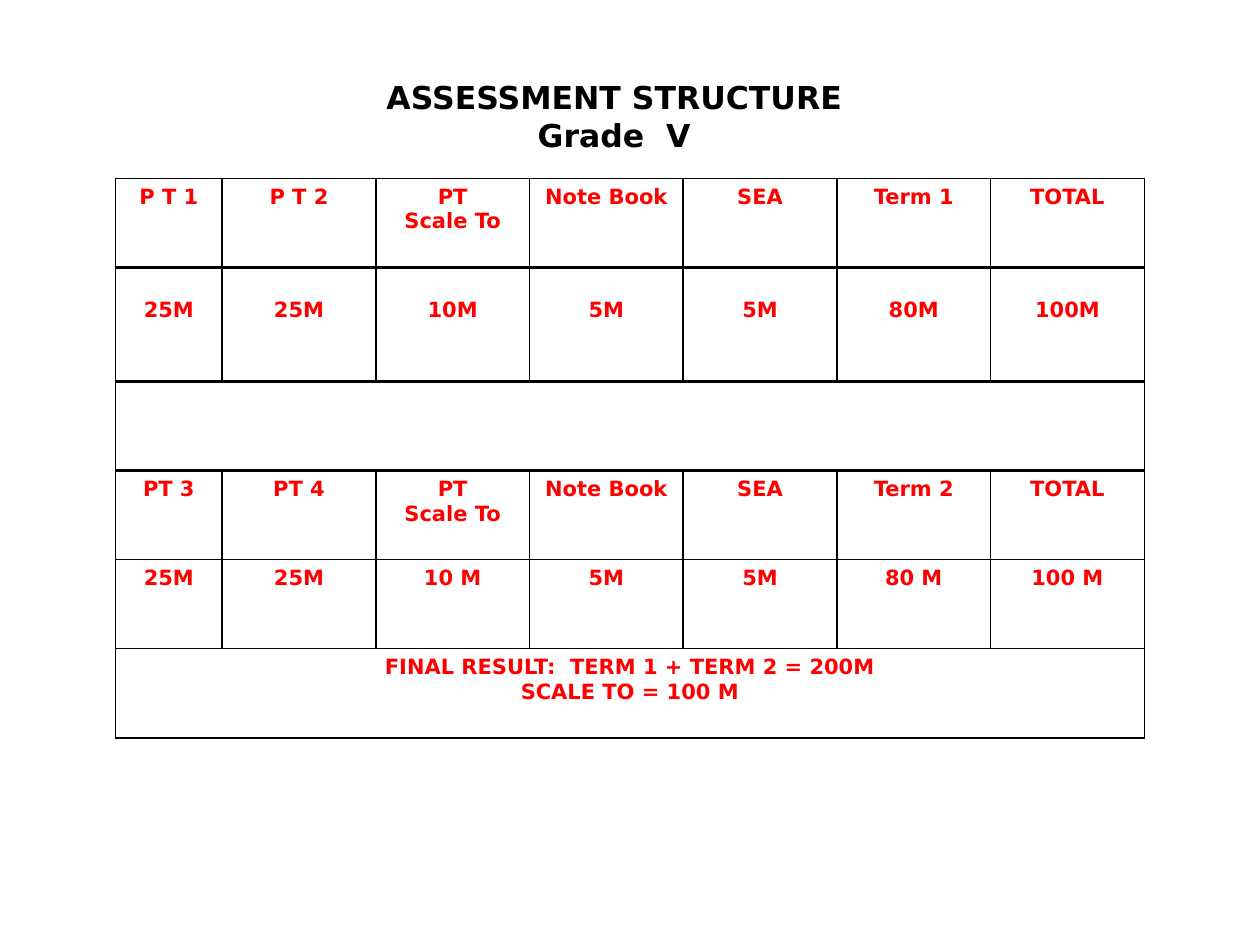
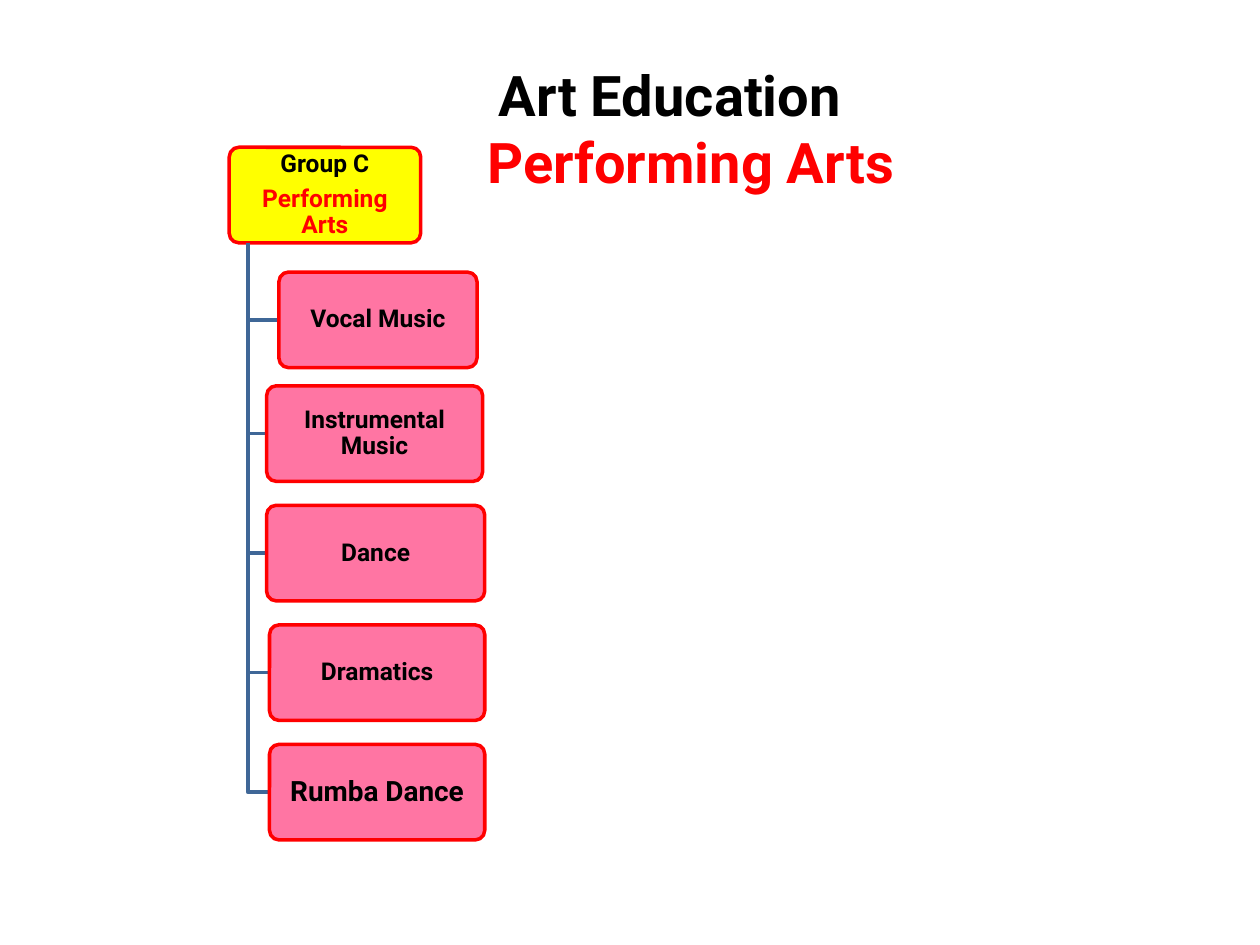
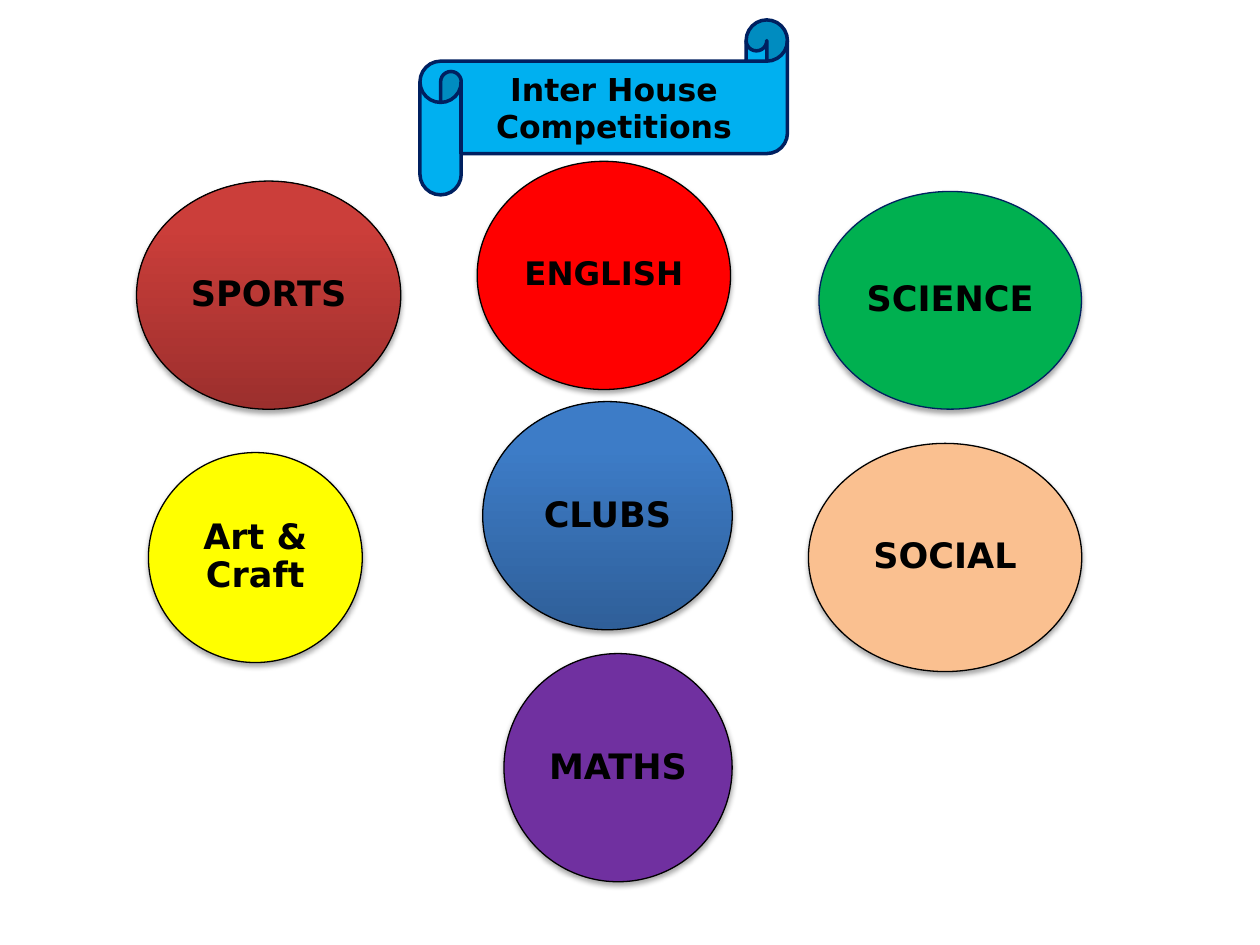
from dataclasses import dataclass

from lxml import etree
from pptx import Presentation
from pptx.dml.color import RGBColor
from pptx.enum.shapes import MSO_SHAPE
from pptx.enum.text import MSO_ANCHOR, PP_ALIGN
from pptx.oxml.ns import qn
from pptx.util import Pt

BLACK = RGBColor(0x00, 0x00, 0x00)
WHITE = RGBColor(0xFF, 0xFF, 0xFF)
RED = RGBColor(0xFF, 0x00, 0x00)
YELLOW = RGBColor(0xFF, 0xFF, 0x00)
PINK = RGBColor(0xFF, 0x66, 0x99)
STEEL = RGBColor(0x3F, 0x67, 0x97)
NAVY = RGBColor(0x00, 0x20, 0x60)
SKY = RGBColor(0x00, 0xB0, 0xF0)
GREEN = RGBColor(0x00, 0xB0, 0x50)
PEACH = RGBColor(0xFA, 0xC0, 0x90)
PURPLE = RGBColor(0x70, 0x30, 0xA0)
BLUE_FADE = (RGBColor(0x2F, 0x5F, 0x99), RGBColor(0x3D, 0x7C, 0xC7))
BRICK_FADE = (RGBColor(0x9C, 0x2F, 0x2D), RGBColor(0xCB, 0x3E, 0x3A))

ROUND_RECT = MSO_SHAPE.ROUNDED_RECTANGLE
ELLIPSE = MSO_SHAPE.OVAL
SCROLL = MSO_SHAPE.HORIZONTAL_SCROLL
CENTER = PP_ALIGN.CENTER
MIDDLE = MSO_ANCHOR.MIDDLE

DEJAVU = "DejaVu Sans"
ROBOTO = "Roboto"


@dataclass(frozen=True)
class Line:
    text: str
    color: RGBColor = BLACK
    indent: float = 0


@dataclass(frozen=True)
class TextStyle:
    font: str
    size: float
    spacing: float = 1.0
    gap: float = 0


@dataclass(frozen=True)
class Node:
    lines: tuple[Line, ...]
    box: tuple[float, float, float, float]
    fill: RGBColor | tuple[RGBColor, RGBColor]
    style: TextStyle
    shape: int = ELLIPSE
    line_color: RGBColor = BLACK
    line_width: float = 0.75
    insets: tuple[float, float] = (0.7, 0.7)
    adjust: float | None = None


def apply(target, values: dict) -> None:
    for name, value in values.items():
        setattr(target, name, value)


def write_lines(tf, lines: tuple[Line, ...], style: TextStyle) -> None:
    for i, line in enumerate(lines):
        p = tf.add_paragraph() if i else tf.paragraphs[0]
        apply(p, {"alignment": CENTER, "line_spacing": style.spacing})
        if i and style.gap:
            p.space_before = Pt(style.gap)
        if line.indent:
            p._p.get_or_add_pPr().set("marL", str(Pt(line.indent)))
        r = p.add_run()
        r.text = line.text
        apply(r.font, {"name": style.font, "size": Pt(style.size), "bold": True})
        r.font.color.rgb = line.color


def add_title(s, box: tuple[float, ...], lines: tuple[Line, ...], style: TextStyle) -> None:
    tf = s.shapes.add_textbox(*map(Pt, box)).text_frame
    tf.word_wrap = True
    write_lines(tf, lines, style)


def add_node(s, node: Node):
    sp = s.shapes.add_shape(node.shape, *map(Pt, node.box))
    sp.shadow.inherit = False
    if node.adjust is not None:
        sp.adjustments[0] = node.adjust
    if isinstance(node.fill, RGBColor):
        sp.fill.solid()
        sp.fill.fore_color.rgb = node.fill
    else:
        sp.fill.gradient()
        sp.fill.gradient_angle = 90
        for stop, color, position in zip(sp.fill.gradient_stops, node.fill, (0, 0.8)):
            stop.color.rgb = color
            stop.position = position
    sp.line.color.rgb = node.line_color
    sp.line.width = Pt(node.line_width)
    side, top = map(Pt, node.insets)
    apply(sp.text_frame, {
        "word_wrap": True, "vertical_anchor": MIDDLE,
        "margin_left": side, "margin_right": side,
        "margin_top": top, "margin_bottom": top,
    })
    write_lines(sp.text_frame, node.lines, node.style)
    return sp


def set_alpha(color_el, percent: int) -> None:
    etree.SubElement(color_el, qn("a:alpha")).set("val", str(percent * 1000))


def add_shadow(sp) -> None:
    effects = sp._element.spPr.find(qn("a:effectLst"))
    shadow = etree.SubElement(effects, qn("a:outerShdw"), {
        "blurRad": str(Pt(3.1)), "dist": str(Pt(1.8)),
        "dir": "5400000", "rotWithShape": "0",
    })
    set_alpha(etree.SubElement(shadow, qn("a:srgbClr"), val=str(BLACK)), 35)


def set_borders(cell, top: float, bottom: float) -> None:
    tc_pr = cell._tc.get_or_add_tcPr()
    widths = {"lnL": 1, "lnR": 1, "lnT": top, "lnB": bottom}
    for i, (side, width) in enumerate(widths.items()):
        ln = etree.Element(qn(f"a:{side}"), w=str(Pt(width)))
        fill = etree.SubElement(ln, qn("a:solidFill"))
        etree.SubElement(fill, qn("a:srgbClr"), val=str(BLACK))
        tc_pr.insert(i, ln)


def assessment_slide(s) -> None:
    add_title(s, (66, 41, 570, 94), (Line("ASSESSMENT STRUCTURE"), Line("Grade  V")),
              TextStyle(DEJAVU, 18))
    rows = (
        ("P T 1", "P T 2", "PT\nScale To", "Note Book", "SEA", "Term 1", "TOTAL"),
        ("25M", "25M", "10M", "5M", "5M", "80M", "100M"),
        (),
        ("PT 3", "PT 4", "PT\nScale To", "Note Book", "SEA", "Term 2", "TOTAL"),
        ("25M", "25M", "10 M", "5M", "5M", "80 M", "100 M"),
        ("FINAL RESULT:  TERM 1 + TERM 2 = 200M\nSCALE TO = 100 M",),
    )
    widths = (61,) + (87.84,) * 6
    heights = (50.9, 65.2) + (50.9,) * 4
    rules = (1, 2, 2, 2, 1, 1, 1)
    marks_row = 1
    style = TextStyle(DEJAVU, 12)
    table = s.shapes.add_table(len(rows), len(widths), Pt(66), Pt(102),
                               Pt(sum(widths)), Pt(sum(heights))).table
    apply(table, {"first_row": False, "horz_banding": False})
    for column, width in zip(table.columns, widths):
        column.width = Pt(width)
    for i, texts in enumerate(rows):
        table.rows[i].height = Pt(heights[i])
        for cell in table.rows[i].cells:
            cell.fill.background()
            set_borders(cell, rules[i], rules[i + 1])
            if i == marks_row:
                cell.margin_top = Pt(17.4)
        if len(texts) < len(widths):
            table.cell(i, 0).merge(table.cell(i, len(widths) - 1))
        for j, text in enumerate(texts):
            lines = tuple(Line(part, RED) for part in text.split("\n"))
            write_lines(table.cell(i, j).text_frame, lines, style)


def add_branch(s, trunk_x: float, trunk_top: float, node: Node) -> None:
    left, top, _, height = node.box
    middle = top + height / 2
    builder = s.shapes.build_freeform(Pt(trunk_x), Pt(trunk_top))
    builder.add_line_segments(
        [(Pt(trunk_x), Pt(middle)), (Pt(left), Pt(middle))], close=False)
    sp = builder.convert_to_shape()
    sp.shadow.inherit = False
    sp.fill.background()
    sp.line.color.rgb = STEEL
    sp.line.width = Pt(2)


def performing_arts_slide(s) -> None:
    height = 54.6
    box_format = {"shape": ROUND_RECT, "line_color": RED, "line_width": 2, "adjust": 0.1}
    root = Node((Line("Group C"), Line("Performing Arts", RED)), (131, 84.2, 109.4, height),
                YELLOW, TextStyle(ROBOTO, 14, 0.9, 5), insets=(8, 1.5), **box_format)
    add_node(s, root)
    second_top, step = 220.5, 68.3
    branches = (
        ("Vocal Music", 159.4, 155.5, 113.2, 14),
        ("Instrumental Music", 152.4, second_top, 123.4, 14),
        ("Dance", 152.4, second_top + step, 124.6, 14),
        ("Dramatics", 154, second_top + 2 * step, 123, 14),
        ("Rumba Dance", 154, second_top + 3 * step, 123, 16),
    )
    for text, left, top, width, size in branches:
        node = Node((Line(text),), (left, top, width, height), PINK,
                    TextStyle(ROBOTO, size, 0.9), insets=(2, 1.5), **box_format)
        add_branch(s, 141.6, root.box[1] + height, node)
        sp = add_node(s, node)
        set_alpha(sp._element.spPr.find(f"{qn('a:solidFill')}/{qn('a:srgbClr')}"), 90)
    add_title(s, (126, 31, 481.7, 124),
              (Line("Art Education", indent=32), Line("Performing Arts", RED, 56)),
              TextStyle(ROBOTO, 32))


def competitions_slide(s) -> None:
    label = TextStyle(DEJAVU, 20, 0.9)
    small_label = TextStyle(DEJAVU, 18.5, 0.9)
    circles = (
        Node((Line("CLUBS"),), (275.8, 229.5, 142.6, 130.4), BLUE_FADE, label),
        Node((Line("ENGLISH"),), (272.7, 92.2, 144.8, 130.4), RED, small_label),
        Node((Line("SCIENCE"),), (468, 109.4, 150, 124.4), GREEN, label, line_color=NAVY),
        Node((Line("SOCIAL"),), (462, 253.4, 156.2, 130.4), PEACH, label),
        Node((Line("MATHS"),), (288, 373.5, 130.4, 130.4), PURPLE, label),
        Node((Line("Art & Craft"),), (84.8, 258.6, 122.2, 120), YELLOW, label),
        Node((Line("SPORTS"),), (78, 103.5, 151, 130.4), BRICK_FADE, label),
    )
    for circle in circles:
        add_shadow(add_node(s, circle))
    add_node(s, Node((Line("Inter House Competitions"),), (240, 11.4, 210, 100), SKY,
                     TextStyle(DEJAVU, 18), SCROLL, NAVY, 2, (7.2, 3.6), 0.236))


def main() -> None:
    prs = Presentation()
    apply(prs, {"slide_width": Pt(720), "slide_height": Pt(540)})
    for build in (assessment_slide, performing_arts_slide, competitions_slide):
        s = prs.slides.add_slide(prs.slide_layouts[6])
        s.background.fill.solid()
        s.background.fill.fore_color.rgb = WHITE
        build(s)
    prs.save("out.pptx")


if __name__ == "__main__":
    main()
